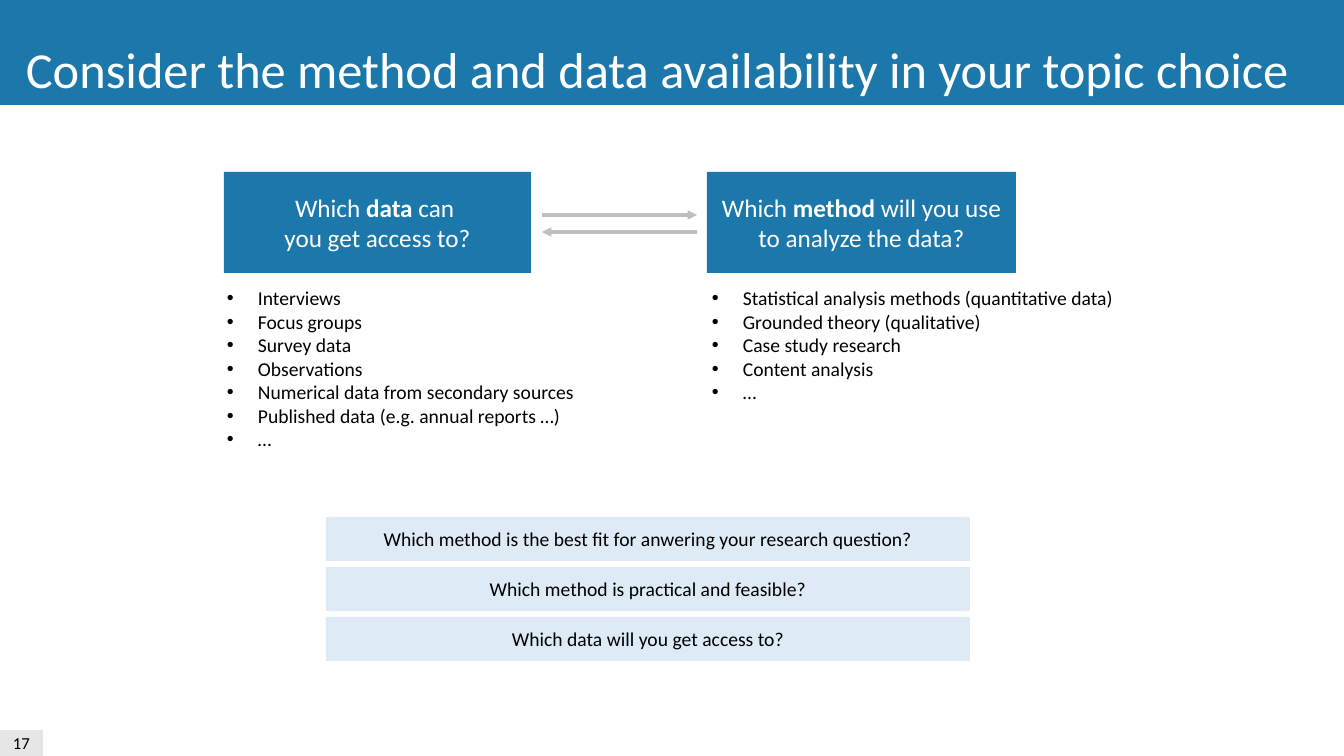
import pptx
import pptx.dml.color
import pptx.enum.shapes
import pptx.enum.text
import pptx.oxml.ns
import pptx.util
from lxml import etree

RGBColor = pptx.dml.color.RGBColor
BLUE = RGBColor(0x1C, 0x78, 0xAB)
PALE_BLUE = RGBColor(0xDE, 0xEB, 0xF7)
LIGHT_GRAY = RGBColor(0xE7, 0xE6, 0xE6)
ARROW_GRAY = RGBColor(0xBF, 0xBF, 0xBF)
BLACK = RGBColor(0, 0, 0)
WHITE = RGBColor(0xFF, 0xFF, 0xFF)

TITLE = "Consider the method and data availability in your topic choice"
DATA_SOURCES = [
    "Interviews",
    "Focus groups",
    "Survey data",
    "Observations",
    "Numerical data from secondary sources",
    "Published data (e.g. annual reports …)",
    "…",
]
METHODS = [
    "Statistical analysis methods (quantitative data)",
    "Grounded theory (qualitative)",
    "Case study research",
    "Content analysis",
    "…",
]
CHECKS = [
    "Which method is the best fit for anwering your research question?",
    "Which method is practical and feasible?",
    "Which data will you get access to?",
]


def px(count):
    """Turn pixels (100.8 to the inch) into EMU."""
    return round(count * 914400 / 100.8)


def add_xml(parent, tag, **attributes):
    return etree.SubElement(parent, pptx.oxml.ns.qn(tag), attributes)


class SlideBuilder:
    font_name = "Calibri"

    def __init__(self, slide):
        self.shapes = slide.shapes

    def style_runs(self, para, size, color):
        for span in para.runs:
            span.font.name = self.font_name
            span.font.size = pptx.util.Pt(size)
            span.font.color.rgb = color

    def block(self, left, top, width, height, fill, text="", size=14, color=BLACK):
        """Add a filled rectangle; *stars* mark bold and a newline breaks the line."""
        box = self.shapes.add_shape(
            pptx.enum.shapes.MSO_SHAPE.RECTANGLE, px(left), px(top), px(width), px(height))
        box.shadow.inherit = False
        box.fill.solid()
        box.fill.fore_color.rgb = fill
        box.line.fill.background()
        box.text_frame.word_wrap = True
        box.text_frame.vertical_anchor = pptx.enum.text.MSO_ANCHOR.MIDDLE
        para = box.text_frame.paragraphs[0]
        para.alignment = pptx.enum.text.PP_ALIGN.CENTER
        for index, part in enumerate(text.split("*")):
            for line_number, line in enumerate(part.split("\n")):
                if line_number:
                    para.add_line_break()
                if line:
                    span = para.add_run()
                    span.text = line
                    span.font.bold = index % 2 == 1
        self.style_runs(para, size, color)

    def text_box(self, left, top, width, height, text, size, color):
        box = self.shapes.add_textbox(px(left), px(top), px(width), px(height))
        frame = box.text_frame
        frame.word_wrap = False
        frame.auto_size = pptx.enum.text.MSO_AUTO_SIZE.SHAPE_TO_FIT_TEXT
        frame.text = text
        for para in frame.paragraphs:
            self.style_runs(para, size, color)
        return frame

    def bullets(self, left, top, width, height, items):
        frame = self.text_box(left, top, width, height, "\n".join(items), 14, BLACK)
        for para in frame.paragraphs:
            properties = para._p.get_or_add_pPr()
            properties.set("marL", str(px(31)))
            properties.set("indent", str(-px(31)))
            add_xml(properties, "a:buFont", typeface="Arial")
            add_xml(properties, "a:buChar", char="•")

    def arrow(self, start, end, height):
        connector = self.shapes.add_connector(
            pptx.enum.shapes.MSO_CONNECTOR.STRAIGHT, px(start), px(height), px(end), px(height))
        connector.line.color.rgb = ARROW_GRAY
        connector.line.width = pptx.util.Pt(2.25)
        add_xml(connector.line._get_or_add_ln(), "a:tailEnd", type="triangle")
        add_xml(connector._element.spPr, "a:effectLst")


def main():
    deck = pptx.Presentation()
    deck.slide_width, deck.slide_height = px(1344), px(756)
    page = SlideBuilder(deck.slides.add_slide(deck.slide_layouts[6]))

    page.block(0, 730, 43, 26, LIGHT_GRAY, "17", size=12)

    page.block(224, 172, 307, 101, BLUE, "Which *data *can \nyou get access to?", 18, WHITE)
    page.bullets(217, 281, 371, 176, DATA_SOURCES)

    page.block(707, 172, 309, 101, BLUE,
               "Which *method* will you use to analyze the data?", 18, WHITE)
    page.arrow(542, 697, 215)
    page.arrow(697, 542, 232)
    page.bullets(702, 281, 427, 129, METHODS)

    for row, check in enumerate(CHECKS):
        page.block(326, 517 + 50 * row, 644, 44, PALE_BLUE, check)

    page.block(0, 0, 1344, 105, BLUE)
    page.text_box(16, 33, 1293, 72, TITLE, 36, WHITE)

    deck.save("out.pptx")


if __name__ == "__main__":
    main()
